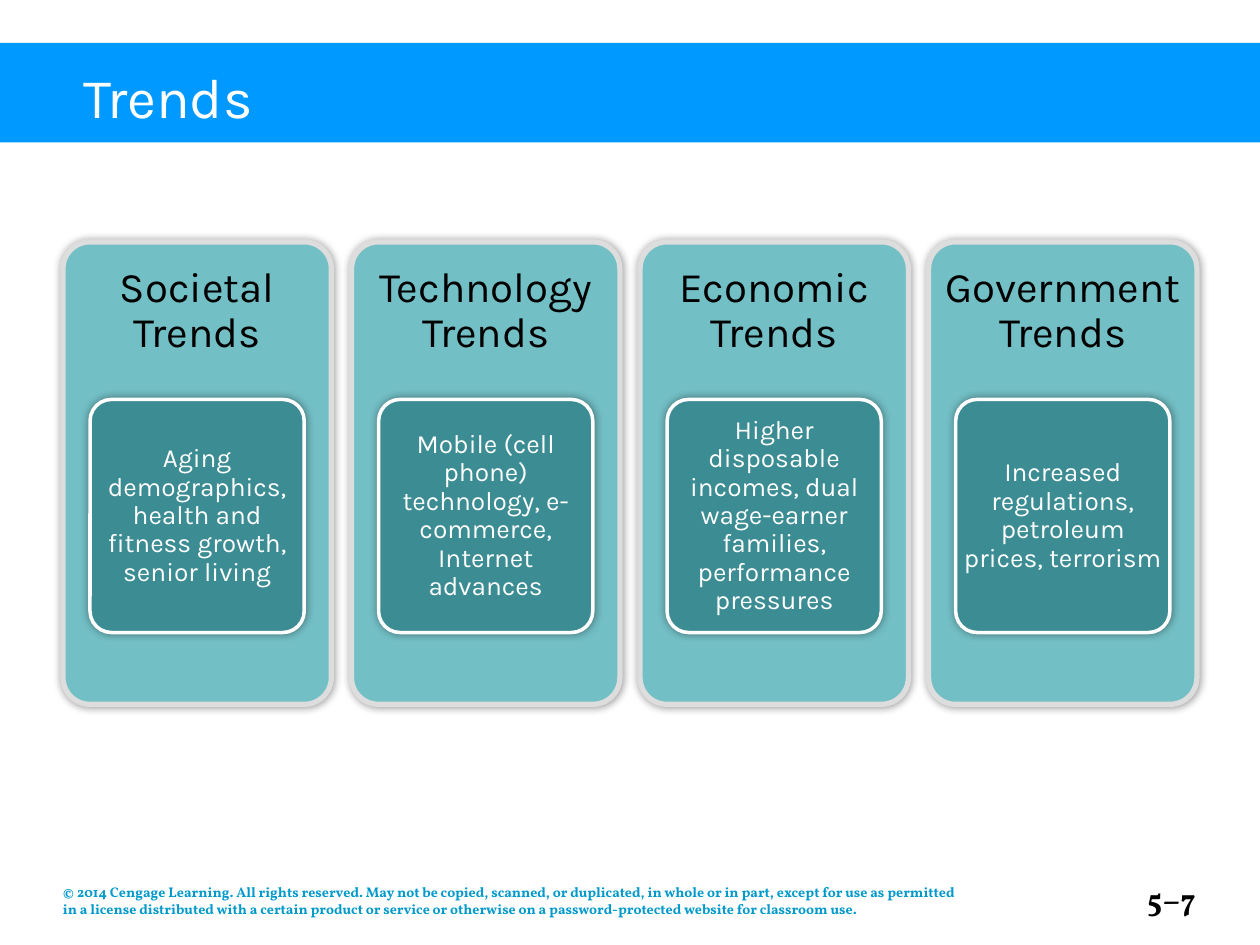
from dataclasses import dataclass

from lxml.etree import SubElement
from pptx import Presentation
from pptx.dml.color import RGBColor
from pptx.enum.shapes import MSO_SHAPE
from pptx.enum.text import MSO_ANCHOR, MSO_AUTO_SIZE, PP_ALIGN
from pptx.oxml.ns import qn
from pptx.util import Inches, Pt


@dataclass(frozen=True)
class Theme:
    sans: str = "Karla"
    serif: str = "Vollkorn"
    banner: str = "0099FF"
    panel: str = "72BFC5"
    edge: str = "DDDDDD"
    card: str = "3C8C93"
    white: str = "FFFFFF"
    black: str = "000000"
    legal: str = "0099CC"
    title_pt: int = 32
    head_pt: int = 24
    body_pt: int = 15
    page_pt: int = 18
    legal_pt: int = 8


@dataclass(frozen=True)
class Box:
    left: float
    top: float
    width: float
    height: float

    def lengths(self) -> tuple:
        return tuple(Inches(v) for v in (self.left, self.top, self.width, self.height))


@dataclass(frozen=True)
class Style:
    font: str
    size: int
    color: str
    bold: bool = False
    align: PP_ALIGN = PP_ALIGN.CENTER
    anchor: MSO_ANCHOR = MSO_ANCHOR.MIDDLE
    pads: tuple = (0.1, 0.1, 0.1, 0.1)
    lines: float = 1.0


@dataclass(frozen=True)
class Trend:
    head: str
    body: str


THEME = Theme()
TITLE = Style(THEME.sans, THEME.title_pt, THEME.white, align=PP_ALIGN.LEFT,
              pads=(0.1, 0.15, 0.1, 0.1))
HEAD = Style(THEME.sans, THEME.head_pt, THEME.black, lines=0.9)
BODY = Style(THEME.sans, THEME.body_pt, THEME.white, lines=0.9,
             pads=(0.04, 0.03, 0.04, 0.03))
LEGAL = Style(THEME.serif, THEME.legal_pt, THEME.legal, True, PP_ALIGN.LEFT,
              MSO_ANCHOR.BOTTOM, (0, 0.05, 0, 0.05))
PAGE = Style(THEME.serif, THEME.page_pt, THEME.black, True, PP_ALIGN.RIGHT,
             MSO_ANCHOR.BOTTOM, (0, 0.05, 0, 0.05))

TRENDS = (
    Trend("Societal Trends",
          "Aging demographics, health and fitness growth, senior living"),
    Trend("Technology Trends",
          "Mobile (cell phone) technology, e-commerce, Internet advances"),
    Trend("Economic Trends",
          "Higher disposable incomes, dual wage-earner families, performance pressures"),
    Trend("Government Trends",
          "Increased regulations, petroleum prices, terrorism"),
)
NOTICE = (
    "© 2014 Cengage Learning. All rights reserved. May not be copied, scanned, "
    "or duplicated, in whole or in part, except for use as permitted in a license "
    "distributed with a certain product or service or otherwise on a "
    "password-protected website for classroom use."
)

MARGIN, TOP, STEP = 0.5, 1.92, 2.29
PANEL_W, PANEL_H, HEAD_H = 2.13, 3.67, 1.1
CARD_TOP, CARD_W, CARD_H = 3.17, 1.7, 1.85


def paint(part, color: str) -> None:
    part.solid()
    part.fore_color.rgb = RGBColor.from_string(color)


def write(shape, text: str, style: Style) -> None:
    frame = shape.text_frame
    frame.text = text
    left, top, right, bottom = (Inches(pad) for pad in style.pads)
    layout = {"word_wrap": True, "auto_size": MSO_AUTO_SIZE.NONE,
              "vertical_anchor": style.anchor, "margin_left": left,
              "margin_top": top, "margin_right": right, "margin_bottom": bottom}
    for name, value in layout.items():
        setattr(frame, name, value)
    line = frame.paragraphs[0]
    line.alignment, line.line_spacing = style.align, style.lines
    font = line.runs[0].font
    for name, value in {"name": style.font, "size": Pt(style.size),
                        "bold": style.bold}.items():
        setattr(font, name, value)
    font.color.rgb = RGBColor.from_string(style.color)


def label(slide, box: Box, text: str, style: Style) -> None:
    write(slide.shapes.add_textbox(*box.lengths()), text, style)


def glow(shape) -> None:
    """Add a soft black shadow evenly around the shape."""
    shape.shadow.inherit = False
    effects = shape._element.spPr.find(qn("a:effectLst"))
    shade = SubElement(effects, qn("a:outerShdw"), blurRad=str(Pt(5)),
                       dist="0", dir="0", rotWithShape="0")
    color = SubElement(shade, qn("a:srgbClr"), val=THEME.black)
    SubElement(color, qn("a:alpha"), val="40000")


def tile(slide, box: Box, fill: str, edge: str, width: int) -> None:
    shape = slide.shapes.add_shape(MSO_SHAPE.ROUNDED_RECTANGLE, *box.lengths())
    shape.adjustments[0] = 0.1
    paint(shape.fill, fill)
    paint(shape.line.fill, edge)
    shape.line.width = Pt(width)
    glow(shape)


def banner(slide, text: str) -> None:
    title = slide.shapes.title
    title.left, title.top, title.width, title.height = Box(0, 0.34, 10, 0.79).lengths()
    paint(title.fill, THEME.banner)
    write(title, text, TITLE)
    props = title.text_frame.paragraphs[0]._p.get_or_add_pPr()
    props.set("marL", str(Inches(0.56)))
    props.set("indent", "0")


def column(slide, left: float, trend: Trend) -> None:
    inner = Box(left + (PANEL_W - CARD_W) / 2, CARD_TOP, CARD_W, CARD_H)
    tile(slide, Box(left, TOP, PANEL_W, PANEL_H), THEME.panel, THEME.edge, 3)
    label(slide, Box(left, TOP, PANEL_W, HEAD_H), trend.head, HEAD)
    tile(slide, inner, THEME.card, THEME.white, 2)
    label(slide, inner, trend.body, BODY)


def main() -> None:
    deck = Presentation()
    deck.slide_width, deck.slide_height = Inches(10), Inches(7.5)
    slide = deck.slides.add_slide(deck.slide_layouts.get_by_name("Title Only"))
    banner(slide, "Trends")
    for i, trend in enumerate(TRENDS):
        column(slide, MARGIN + i * STEP, trend)
    label(slide, Box(MARGIN, 7, 7.17, 0.33), NOTICE, LEGAL)
    label(slide, Box(8.07, 7.08, 1.42, 0.25), "5–7", PAGE)
    deck.save("out.pptx")


if __name__ == "__main__":
    main()
